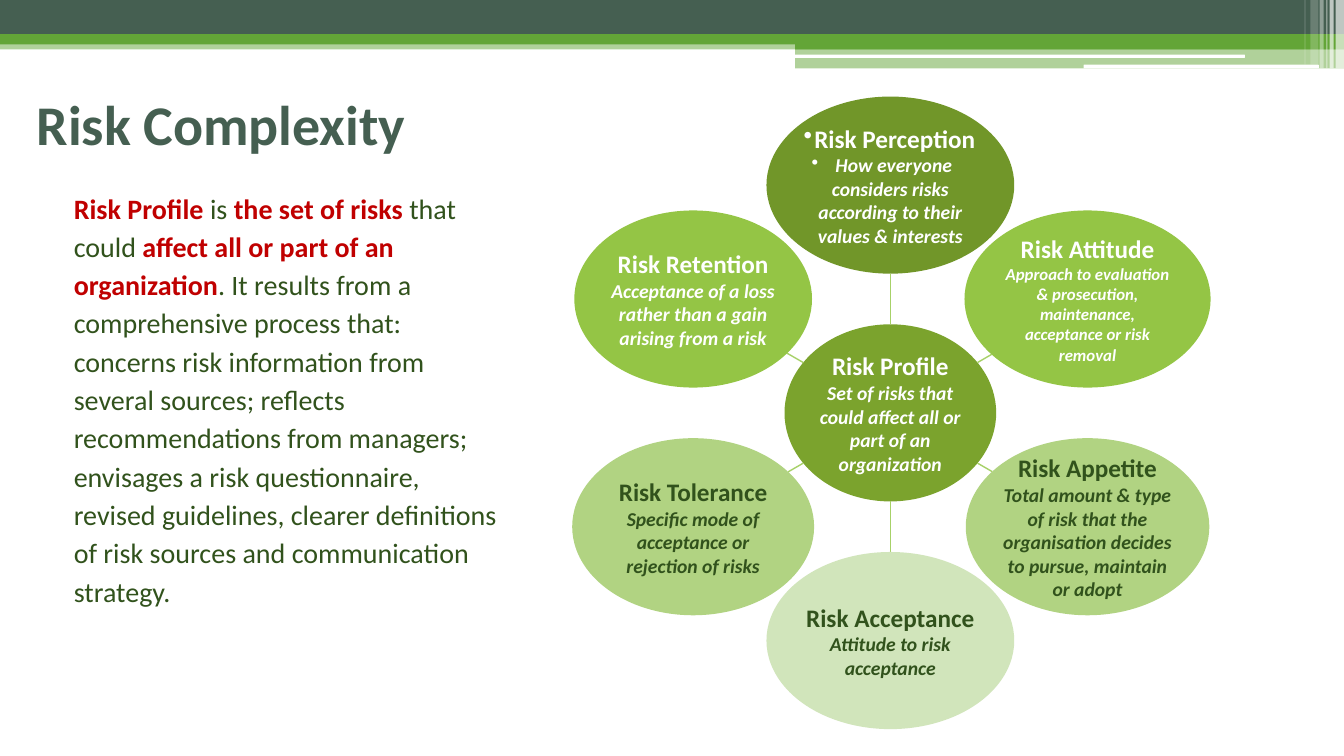
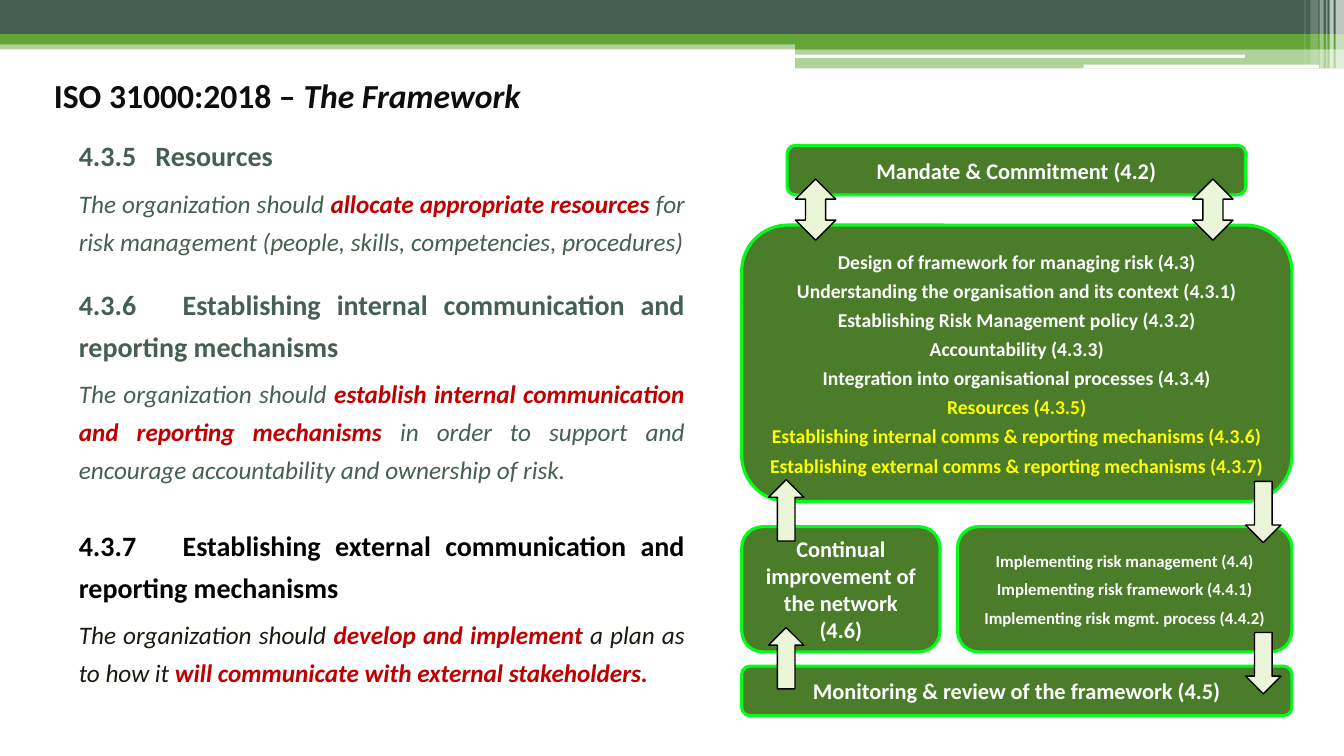
import math

from lxml import etree
from pptx import Presentation
from pptx import util as u
from pptx.dml.color import RGBColor
from pptx.enum import shapes, text
from pptx.oxml.ns import qn

COLS, ROWS = 160, 90
SLIDE_W = u.Inches(13.333)
SLIDE_H = u.Inches(7.5)
FONT = "Calibri"

WHITE = RGBColor(0xFF, 0xFF, 0xFF)
BLACK = RGBColor(0x00, 0x00, 0x00)
SLATE = RGBColor(0x45, 0x5F, 0x51)
GREEN = RGBColor(0x63, 0xA5, 0x37)
FOREST = RGBColor(0x31, 0x52, 0x1C)
RED = RGBColor(0xC0, 0x00, 0x00)
YELLOW = RGBColor(0xFF, 0xFF, 0x00)
INK = RGBColor(0x0D, 0x0D, 0x0D)
BROWN = RGBColor(0x1B, 0x1A, 0x10)
SPOKE = RGBColor(0xA7, 0xD1, 0x68)
HUB = RGBColor(0x7B, 0xA3, 0x2D)
OLIVE = RGBColor(0x71, 0x96, 0x29)
LIME = RGBColor(0x94, 0xC5, 0x45)
SAGE = RGBColor(0xB1, 0xD3, 0x82)
MINT = RGBColor(0xD1, 0xE5, 0xBB)
PANEL = RGBColor(0x4A, 0x7C, 0x29)
NEON = RGBColor(0x05, 0xFB, 0x1C)
PALE = RGBColor(0xEB, 0xF5, 0xD7)

KIND = shapes.MSO_SHAPE
ALIGN = text.PP_ALIGN
MIDDLE = text.MSO_ANCHOR.MIDDLE

BANDS = [
    (KIND.RECTANGLE, 0, 4.8, 160, 1.08, GREEN, 50),
    (KIND.RECTANGLE, 0, 0, 160, 4.08, SLATE, 100),
    (KIND.RECTANGLE, 0, 4.08, 160, 1.2, GREEN, 100),
    (KIND.RECTANGLE, 94.65, 4.68, 65.35, 1.2, GREEN, 100),
    (KIND.RECTANGLE, 94.65, 5.8, 65.35, 2.36, GREEN, 50),
    (KIND.ROUNDED_RECTANGLE, 94.6, 6.5, 53.6, 0.4, WHITE, 100),
    (KIND.ROUNDED_RECTANGLE, 129, 7.7, 28, 0.45, WHITE, 100),
    (KIND.RECTANGLE, 159, 0, 1, 8.16, WHITE, 65),
    (KIND.RECTANGLE, 158.3, 0, 0.48, 8.16, WHITE, 65),
    (KIND.RECTANGLE, 157.9, 0, 0.12, 8.16, WHITE, 60),
    (KIND.RECTANGLE, 157.1, 0, 0.48, 8.16, WHITE, 40),
    (KIND.RECTANGLE, 156, 0, 0.96, 7.7, WHITE, 20),
    (KIND.RECTANGLE, 155.3, 0, 0.12, 7.7, WHITE, 30),
]

HUB_TEXT = ("Risk Profile", "Set of risks that could affect all or part of an organization")
SATELLITES = [
    (29.5, OLIVE, WHITE, 14, "Risk Perception",
     "How everyone considers risks according to their values & interests"),
    (29.3, LIME, WHITE, 12, "Risk Attitude",
     "Approach to evaluation & prosecution, maintenance, acceptance or risk removal"),
    (29, SAGE, FOREST, 14, "Risk Appetite",
     "Total amount & type of risk that the organisation decides to pursue, maintain or adopt"),
    (29.5, MINT, FOREST, 14, "Risk Acceptance", "Attitude to risk acceptance"),
    (28.8, SAGE, FOREST, 14, "Risk Tolerance",
     "Specific mode of acceptance or rejection of risks"),
    (28.3, LIME, WHITE, 14, "Risk Retention",
     "Acceptance of a loss rather than a gain arising from a risk"),
]

PROFILE = (
    "*Risk Profile *is *the set of risks *that could *affect all or part of an organization*. "
    "It results from a comprehensive process that: concerns risk information from several "
    "sources; reflects recommendations from managers; envisages a risk questionnaire, revised "
    "guidelines, clearer definitions of risk sources and communication strategy."
)

CLAUSES = [
    (14.9, 16.3, 0.76, SLATE, SLATE, "4.3.5\tResources",
     "The organization should *allocate appropriate resources *for risk management "
     "(people, skills, competencies, procedures)"),
    (32.6, 25.9, 1.03, SLATE, SLATE,
     "4.3.6\tEstablishing internal communication and reporting mechanisms",
     "The organization should *establish internal communication and reporting mechanisms *"
     "in order to support and encourage accountability and ownership of risk."),
    (61.3, 25.9, 1.03, BLACK, BROWN,
     "4.3.7\tEstablishing external communication and reporting mechanisms",
     "The organization should *develop and implement *a plan as to how it "
     "*will communicate with external stakeholders.*"),
]

PANELS = [
    (5.4, 0, 54.6, 5.9, 16, 0, ["Mandate & Commitment (4.2)"]),
    (0, 9.5, 65.5, 32.9, 14, 4, [
        "Design of framework for managing risk (4.3)",
        "Understanding the organisation and its context (4.3.1)",
        "Establishing Risk Management policy (4.3.2)",
        "Accountability (4.3.3)",
        "Integration into organisational processes (4.3.4)",
        "*Resources (4.3.5)*",
        "*Establishing internal comms & reporting mechanisms (4.3.6)*",
        "*Establishing external comms & reporting mechanisms (4.3.7)*"]),
    (0, 45.4, 23.6, 14.9, 16, 0, ["Continual improvement of the network", "(4.6)"]),
    (25.7, 45.4, 39.8, 14.9, 12, 6, [
        "Implementing risk management (4.4)",
        "Implementing risk framework (4.4.1)",
        "Implementing risk mgmt. process (4.4.2)"]),
    (0, 62, 65.5, 5.9, 16, 0, ["Monitoring & review of the framework (4.5)"]),
]

ARROWS = [
    (KIND.UP_DOWN_ARROW, 6.4, 4, 4.8),
    (KIND.UP_DOWN_ARROW, 53.7, 4, 4.8),
    (KIND.UP_ARROW, 3.2, 39.8, 4.2),
    (KIND.DOWN_ARROW, 60, 40, 4.2),
    (KIND.UP_ARROW, 3.2, 57.4, 4.2),
    (KIND.DOWN_ARROW, 60, 58, 4.2),
]
ARROW_H = 7.3


def grid(x, y):
    return u.Emu(round(x * SLIDE_W / COLS)), u.Emu(round(y * SLIDE_H / ROWS))


def add_shape(slide, kind, box, fill, line=None, width=1, opacity=100):
    x, y, w, h = box
    sp = slide.shapes.add_shape(kind, *grid(x, y), *grid(w, h))
    sp.shadow.inherit = False
    sp.fill.solid()
    sp.fill.fore_color.rgb = fill
    if opacity < 100:
        color = sp.fill._xPr.find(qn("a:solidFill"))[0]
        etree.SubElement(color, qn("a:alpha"), val=str(opacity * 1000))
    if line is None:
        sp.line.fill.background()
    else:
        sp.line.color.rgb = line
        sp.line.width = u.Pt(width)
    return sp


def add_text(slide, box, anchor=text.MSO_ANCHOR.TOP, inset=None):
    x, y, w, h = box
    tf = slide.shapes.add_textbox(*grid(x, y), *grid(w, h)).text_frame
    return set_frame(tf, anchor, inset)


def set_frame(tf, anchor, inset=None):
    tf.word_wrap = True
    tf.vertical_anchor = anchor
    if inset is not None:
        tf.margin_left = tf.margin_right = tf.margin_top = tf.margin_bottom = u.Inches(inset)
    return tf


def add_paragraph(tf, content, size, color, bold=None, italic=None, align=ALIGN.LEFT,
                  after=0, spacing=None, accent=RED, accent_bold=True, accent_italic=None):
    p = tf.paragraphs[0]
    if p.runs:
        p = tf.add_paragraph()
    p.alignment = align
    p.space_after = u.Pt(after)
    if spacing:
        p.line_spacing = spacing
    p.font.name = FONT
    p.font.size = u.Pt(size)
    p.font.italic = italic
    for i, part in enumerate(content.split("*")):
        if not part:
            continue
        r = p.add_run()
        r.text = part
        font = r.font
        font.name, font.size = FONT, u.Pt(size)
        accented = i % 2 == 1
        font.color.rgb = accent if accented else color
        font.bold = accent_bold if accented else bold
        font.italic = accent_italic if accented and accent_italic is not None else italic
    return p


def add_bullet(p):
    etree.SubElement(p._p.get_or_add_pPr(), qn("a:buChar"), char="•")


def add_tab(p, inches):
    tabs = etree.SubElement(p._p.get_or_add_pPr(), qn("a:tabLst"))
    etree.SubElement(tabs, qn("a:tab"), pos=str(u.Inches(inches)), algn="l")


def add_bands(slide):
    for kind, x, y, w, h, color, opacity in BANDS:
        add_shape(slide, kind, (x, y, w, h), color, opacity=opacity)


def add_bubble(slide, cx, cy, w, h, fill, color, size, heading, detail):
    sp = add_shape(slide, KIND.OVAL, (cx - w / 2, cy - h / 2, w, h), fill)
    tf = set_frame(sp.text_frame, MIDDLE, 0.01)
    return [
        add_paragraph(tf, heading, 18, color, True, align=ALIGN.CENTER),
        add_paragraph(tf, detail, size, color, True, True, ALIGN.CENTER),
    ]


def add_spoke(slide, start, end):
    cn = slide.shapes.add_connector(
        shapes.MSO_CONNECTOR.STRAIGHT, *grid(*start), *grid(*end))
    cn.line.color.rgb = SPOKE
    cn.line.width = u.Pt(1)
    etree.SubElement(cn._element.spPr, qn("a:effectLst"))


def add_wheel(slide, box):
    x, y, w, h = box
    cx, cy = x + w / 2, y + h / 2
    bubble_h = h * 0.28
    radius = (h - bubble_h) / 2
    hub_w = 25.2

    def reach(width, dx, dy):
        return 1 / math.hypot(dx / (width / 2), dy / (bubble_h / 2))

    add_bubble(slide, cx, cy, hub_w, bubble_h, HUB, WHITE, 14, *HUB_TEXT)
    for i, (width, fill, color, size, heading, detail) in enumerate(SATELLITES):
        angle = 2 * math.pi * i / len(SATELLITES)
        dx, dy = math.sin(angle), -math.cos(angle)
        near = reach(hub_w, dx, dy)
        far = radius - reach(width, dx, dy)
        add_spoke(slide, (cx + near * dx, cy + near * dy), (cx + far * dx, cy + far * dy))
        paragraphs = add_bubble(slide, cx + radius * dx, cy + radius * dy, width, bubble_h,
                                fill, color, size, heading, detail)
        if i == 0:
            for p in paragraphs:
                add_bullet(p)


def add_clauses(slide, x, w):
    for y, h, tab, heading_color, color, heading, body in CLAUSES:
        tf = add_text(slide, (x, y, w, h))
        p = add_paragraph(tf, heading, 20, heading_color, True, align=ALIGN.JUSTIFY,
                          after=6, spacing=1.25)
        add_tab(p, tab)
        add_paragraph(tf, body, 18, color, italic=True, align=ALIGN.JUSTIFY,
                      after=6, spacing=1.25)


def add_framework(slide, left, top):
    for x, y, w, h, size, after, lines in PANELS:
        sp = add_shape(slide, KIND.ROUNDED_RECTANGLE, (left + x, top + y, w, h),
                       PANEL, NEON, 2.25)
        tf = set_frame(sp.text_frame, MIDDLE)
        for line in lines:
            add_paragraph(tf, line, size, WHITE, True, align=ALIGN.CENTER,
                          after=after, accent=YELLOW)
    for kind, x, y, w in ARROWS:
        add_shape(slide, kind, (left + x, top + y, w, ARROW_H), PALE, BLACK)


def build_complexity(slide):
    add_bands(slide)
    title = add_text(slide, (3.2, 7.6, 144, 14), MIDDLE)
    add_paragraph(title, "Risk Complexity", 40, SLATE, True)
    add_wheel(slide, (67.9, 11.5, 76.2, 75.3))
    profile = add_text(slide, (7.6, 21.6, 53.6, 51.8))
    add_paragraph(profile, PROFILE, 20, FOREST, after=3, spacing=1.14)


def build_framework(slide):
    add_bands(slide)
    add_framework(slide, 88.3, 17.3)
    title = add_text(slide, (1.1, 8.5, 66.2, 5.6), MIDDLE, 0)
    add_paragraph(title, "ISO 31000:2018 – *The Framework*", 24, INK, True,
                  align=ALIGN.CENTER, accent=INK, accent_italic=True)
    add_clauses(slide, 8.2, 74.5)


def main():
    prs = Presentation()
    prs.slide_width, prs.slide_height = SLIDE_W, SLIDE_H
    for build in (build_complexity, build_framework):
        build(prs.slides.add_slide(prs.slide_layouts[6]))
    prs.save("out.pptx")


if __name__ == "__main__":
    main()
